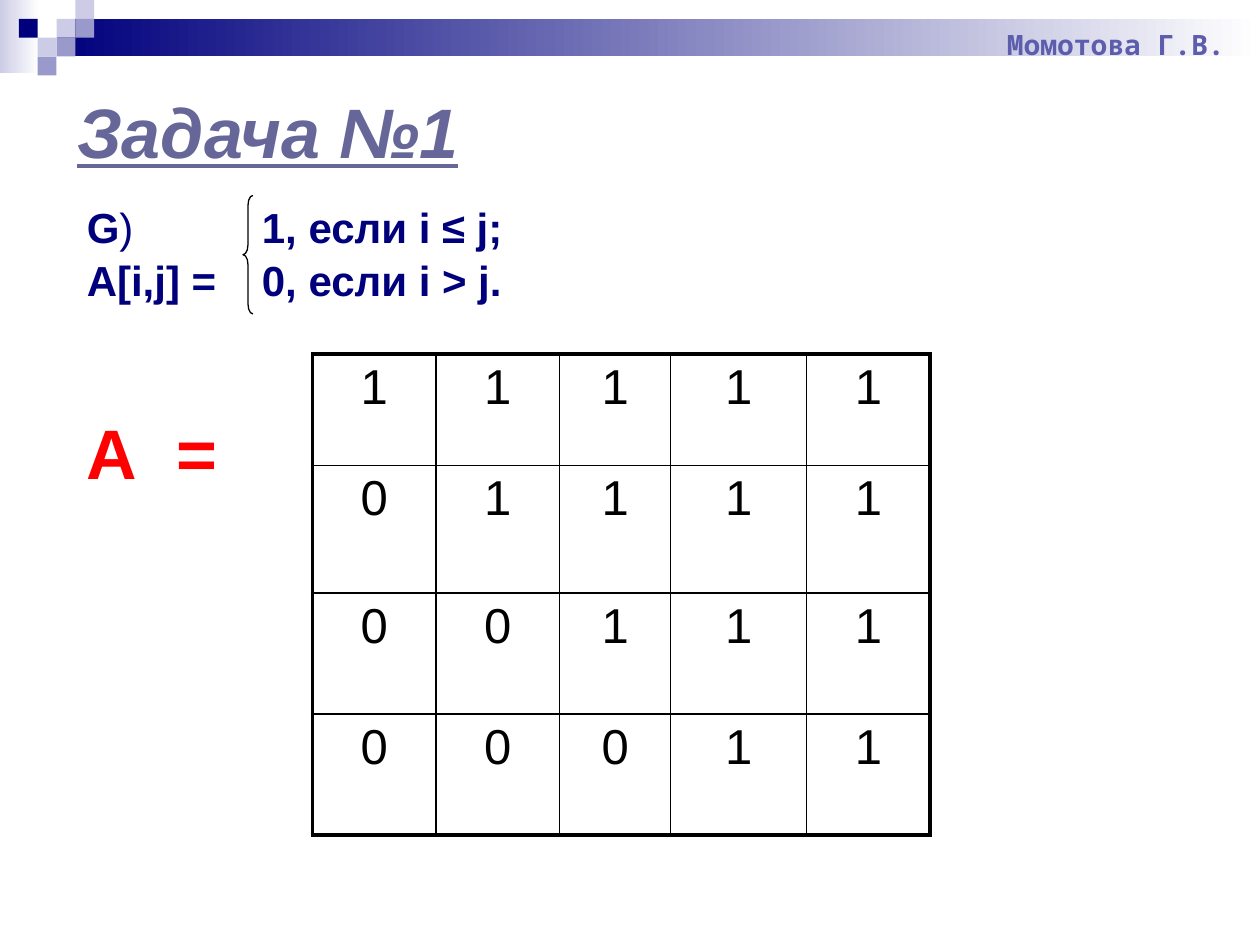
from pptx import Presentation
from pptx.dml.color import RGBColor
from pptx.enum.shapes import MSO_SHAPE
from pptx.enum.text import MSO_ANCHOR, PP_ALIGN
from pptx.oxml import parse_xml
from pptx.oxml.ns import nsdecls
from pptx.util import Cm, Pt

COLORS = {"navy": "00007D", "mid": "9999CC", "pale": "CCCCE6", "white": "FFFFFF",
          "title": "666699", "name": "5D5DAE", "red": "FF0000", "black": "000000"}


def style(par, size, color, bold=True, font="Arial"):
    for run in par.runs:
        run.font.size = Pt(size)
        run.font.name = font
        run.font.bold = bold
        run.font.color.rgb = RGBColor.from_string(COLORS[color])


def add_text(box, lines, tab=None):
    """Add a text box with one paragraph per line and an optional tab stop."""
    frame = slide.shapes.add_textbox(*map(Cm, box)).text_frame
    frame.word_wrap = True
    frame.text = "\n".join(lines)
    if tab:
        for par in frame.paragraphs:
            par._p.get_or_add_pPr().append(parse_xml(
                f'<a:tabLst {nsdecls("a")}><a:tab pos="{Cm(tab)}" algn="l"/></a:tabLst>'))
    return frame


prs = Presentation()
prs.slide_width, prs.slide_height = Cm(25.4), Cm(19.05)
slide = prs.slides.add_slide(prs.slide_layouts[5])

# Header: two gradient bars, then small squares on a grid
bars = [((0, 0, 0.79, 1.47), "pale"), ((1.14, 0.38, 24.26, 0.76), "navy")]
for box, color in bars:
    bar = slide.shapes.add_shape(MSO_SHAPE.RECTANGLE, *map(Cm, box))
    bar.shadow.inherit = False
    bar.line.fill.background()
    bar.fill.gradient()
    bar.fill.gradient_angle = 0
    for stop, pos, name in zip(bar.fill.gradient_stops, (0, 1), (color, "white")):
        stop.position = pos
        stop.color.rgb = RGBColor.from_string(COLORS[name])

side = 0.38
squares = [(3, 1, "pale"), (4, 0, "pale"), (4, 1, "mid"), (2, 2, "pale"),
           (1, 1, "navy"), (3, 2, "mid"), (2, 3, "mid")]
for col, row, color in squares:
    square = slide.shapes.add_shape(
        MSO_SHAPE.RECTANGLE, Cm(col * side), Cm(row * side), Cm(side), Cm(side))
    square.shadow.inherit = False
    square.line.fill.background()
    square.fill.solid()
    square.fill.fore_color.rgb = RGBColor.from_string(COLORS[color])

# Title
title = slide.shapes.title
title.left, title.top, title.width, title.height = map(Cm, (1.3, 1.73, 22.86, 1.8))
title.text_frame.text = "Задача №1"
title.text_frame.vertical_anchor = MSO_ANCHOR.MIDDLE
par = title.text_frame.paragraphs[0]
par.alignment = PP_ALIGN.LEFT
style(par, 40, "title")
par.runs[0].font.italic = par.runs[0].font.underline = True

# Matrix: 1 on and above the diagonal, 0 below it
widths = [2.49, 2.49, 2.24, 2.74, 2.49]
heights = [2.24, 2.57, 2.44, 2.44]
rows, cols = len(heights), len(widths)
table = slide.shapes.add_table(rows, cols, Cm(6.3), Cm(7.14),
                               Cm(sum(widths)), Cm(sum(heights))).table
table.first_row = table.horz_banding = False
for col, width in zip(table.columns, widths):
    col.width = Cm(width)
for row, height in zip(table.rows, heights):
    row.height = Cm(height)
for i in range(rows):
    for j in range(cols):
        cell = table.cell(i, j)
        cell.text_frame.text = "1" if i <= j else "0"
        cell.fill.background()
        par = cell.text_frame.paragraphs[0]
        par.alignment = PP_ALIGN.CENTER
        style(par, 28, "black", bold=False)
        outer = {"L": j == 0, "R": j == cols - 1, "T": i == 0, "B": i == rows - 1}
        for k, (edge, thick) in enumerate(outer.items()):
            cell._tc.get_or_add_tcPr().insert(k, parse_xml(
                f'<a:ln{edge} {nsdecls("a")} w="{Pt(2.25 if thick else 1)}"><a:solidFill>'
                f'<a:srgbClr val="{COLORS["black"]}"/></a:solidFill></a:ln{edge}>'))

# Labels and the rule with its brace
label = add_text((1.5, 8.13, 5.41, 1.96), ["А\t="], tab=1.8)
style(label.paragraphs[0], 40, "red")

rule = add_text((1.5, 3.94, 12.8, 4.42),
                ["G", "А[i,j] =\t0, если i > j."], tab=3.53)
first = rule.paragraphs[0]
for text in (")\t", "1, если i ≤ j;"):
    first.add_run().text = text
for par in rule.paragraphs:
    par.space_before = Pt(1.5)
    style(par, 24, "navy")
first.runs[1].font.bold = False

brace = slide.shapes.add_shape(MSO_SHAPE.LEFT_BRACE, Cm(4.9), Cm(3.94), Cm(0.2), Cm(2.39))
brace.shadow.inherit = False
brace.adjustments[0] = 1.01
brace.fill.background()
brace.line.color.rgb = RGBColor.from_string(COLORS["black"])
brace.line.width = Pt(0.75)

author = add_text((16.89, 0.08, 8.05, 1.27), ["Момотова Г.В."])
author.vertical_anchor = MSO_ANCHOR.BOTTOM
author.paragraphs[0].alignment = PP_ALIGN.RIGHT
style(author.paragraphs[0], 16, "name", font="Noto Sans Mono")

prs.save("out.pptx")
